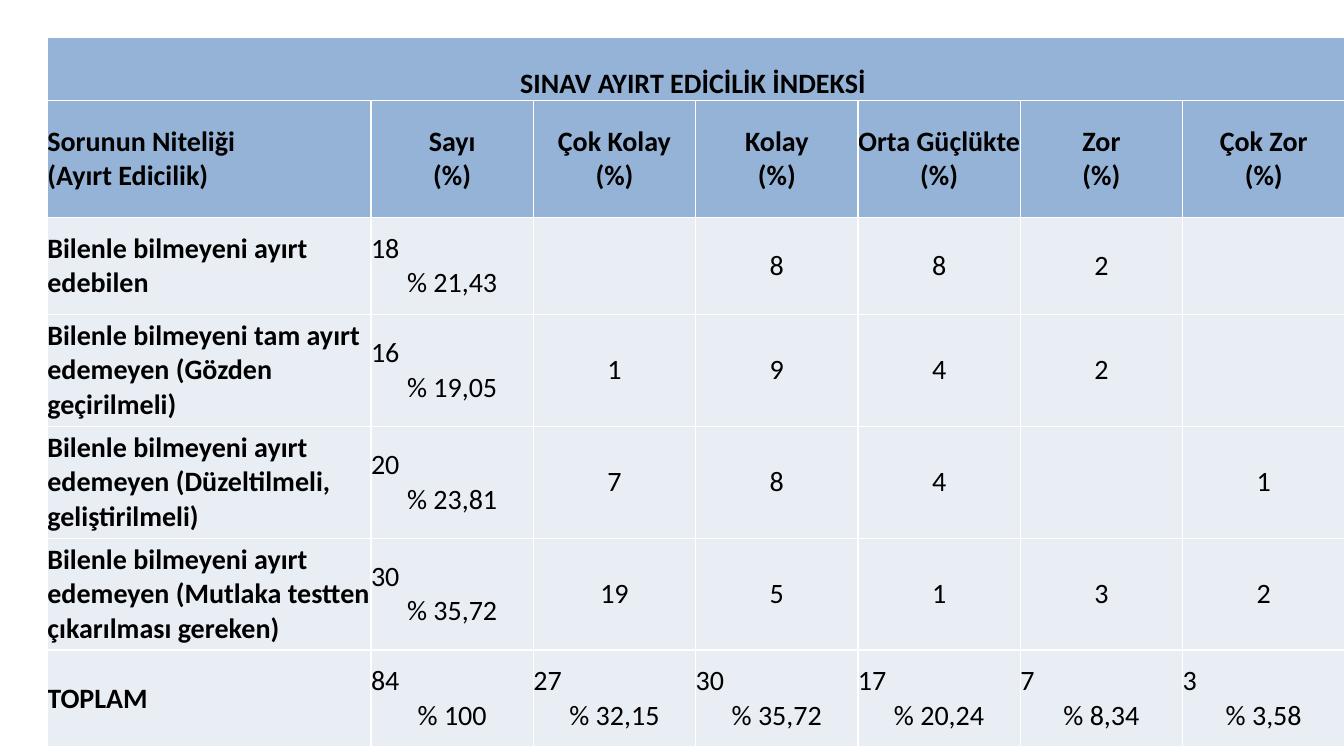
from lxml import etree
from pptx import Presentation
from pptx.dml.color import RGBColor
from pptx.enum.text import MSO_ANCHOR, PP_ALIGN
from pptx.oxml.ns import qn
from pptx.util import Inches, Pt

LEFT, CENTER = PP_ALIGN.LEFT, PP_ALIGN.CENTER
MIDDLE, BOTTOM = MSO_ANCHOR.MIDDLE, MSO_ANCHOR.BOTTOM

COLORS = {"heading": "95B3D7", "body": "E9EDF4", "border": "FFFFFF", "text": "000000"}
COLUMN_WIDTHS = [3.21] + [1.61] * 6
ROW_HEIGHTS = [0.63, 1.16, 0.96, 1.11, 1.11, 1.11, 0.96]

TITLE = "SINAV AYIRT EDİCİLİK İNDEKSİ "
HEADINGS = ["Sorunun Niteliği \n(Ayırt Edicilik)", "Sayı\n(%)", "Çok Kolay\n(%)",
            "Kolay\n(%)", "Orta Güçlükte\n(%)", "Zor\n(%)", "Çok Zor\n(%)"]
# A line break separates a count from its percentage
RESULTS = [
    ["Bilenle bilmeyeni ayırt \nedebilen", "18\n% 21,43", "", "8", "8", "2", ""],
    ["Bilenle bilmeyeni tam ayırt edemeyen (Gözden geçirilmeli)",
     "16\n% 19,05", "1", "9", "4", "2", ""],
    ["Bilenle bilmeyeni ayırt edemeyen (Düzeltilmeli, geliştirilmeli)",
     "20\n% 23,81", "7", "8", "4", "", "1"],
    ["Bilenle bilmeyeni ayırt edemeyen (Mutlaka testten çıkarılması gereken)",
     "30\n% 35,72", "19", "5", "1", "3", "2"],
    ["TOPLAM", "84\n% 100", "27\n% 32,15", "30\n% 35,72", "17\n% 20,24",
     "7\n% 8,34", "3\n% 3,58"],
]


def write_text(frame, text, bold=False, aligns=(CENTER,), size=20):
    """Write one paragraph per line; the last alignment serves all further lines."""
    for index, line in enumerate(text.split("\n")):
        paragraph = frame.add_paragraph() if index else frame.paragraphs[0]
        paragraph.alignment = aligns[min(index, len(aligns) - 1)]
        run = paragraph.add_run()
        run.text = line
        run.font.name = "Calibri"
        run.font.size = Pt(size)
        run.font.bold = bold
        run.font.color.rgb = RGBColor.from_string(COLORS["text"])


def style_cell(cell, fill, anchor=MIDDLE):
    cell.margin_left = cell.margin_right = cell.margin_top = cell.margin_bottom = 0
    cell.vertical_anchor = anchor
    properties = cell._tc.get_or_add_tcPr()
    for side in ("a:lnL", "a:lnR", "a:lnT", "a:lnB"):
        border = etree.SubElement(properties, qn(side), w=str(Pt(1)))
        border_fill = etree.SubElement(border, qn("a:solidFill"))
        etree.SubElement(border_fill, qn("a:srgbClr"), val=COLORS["border"])
    cell.fill.solid()
    cell.fill.fore_color.rgb = RGBColor.from_string(COLORS[fill])


def add_index_table(slide):
    index_table = slide.shapes.add_table(
        len(ROW_HEIGHTS), len(COLUMN_WIDTHS), Inches(0.47), Inches(0.37),
        Inches(sum(COLUMN_WIDTHS)), Inches(sum(ROW_HEIGHTS))).table
    for column, width in zip(index_table.columns, COLUMN_WIDTHS):
        column.width = Inches(width)
    for row, height in zip(index_table.rows, ROW_HEIGHTS):
        row.height = Inches(height)

    # Title across all columns
    for cell in index_table.rows[0].cells:
        style_cell(cell, "heading", BOTTOM)
    title_cell = index_table.cell(0, 0)
    title_cell.merge(index_table.cell(0, len(COLUMN_WIDTHS) - 1))
    write_text(title_cell.text_frame, TITLE, bold=True)

    # Column headings and results
    for r, texts in enumerate([HEADINGS] + RESULTS, start=1):
        is_heading = r == 1
        for c, text in enumerate(texts):
            cell = index_table.cell(r, c)
            style_cell(cell, "heading" if is_heading else "body")
            if c == 0:
                aligns = (LEFT,)
            elif "\n" in text and not is_heading:
                aligns = (LEFT, CENTER)
            else:
                aligns = (CENTER,)
            if text:
                write_text(cell.text_frame, text, bold=is_heading or c == 0, aligns=aligns)


def main():
    prs = Presentation()
    prs.slide_width, prs.slide_height = Inches(13.33), Inches(7.5)
    slide = prs.slides.add_slide(prs.slide_layouts[6])
    add_index_table(slide)
    prs.save("out.pptx")


if __name__ == "__main__":
    main()
